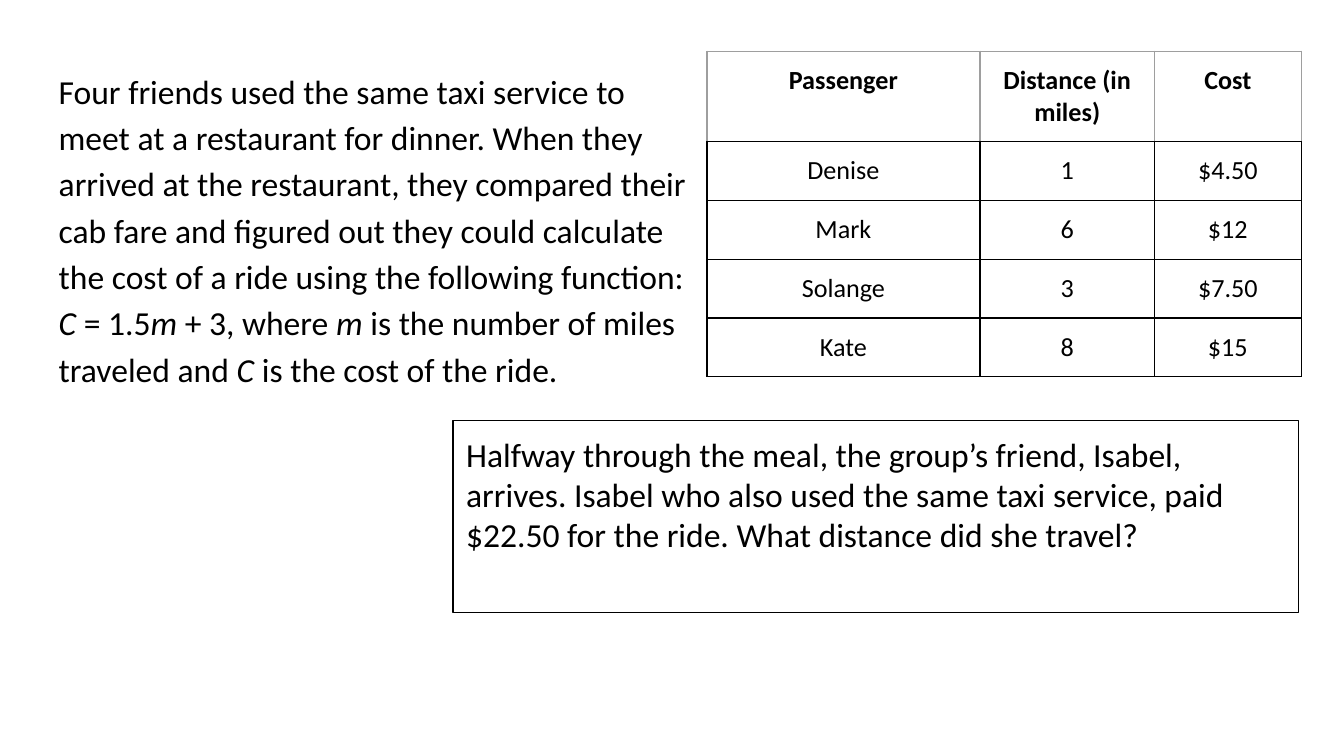
from lxml.etree import SubElement
from pptx import Presentation
from pptx.dml.color import RGBColor
from pptx.enum.shapes import MSO_SHAPE as Preset
from pptx.enum.text import MSO_ANCHOR as Anchor, PP_ALIGN as Align
from pptx.oxml.ns import qn
from pptx.util import Cm, Pt

COLOURS = {"ink": "000000", "paper": "FFFFFF", "header_line": "9E9E9E"}
STORY = [
    ("Four friends used the same taxi service to meet at a restaurant for dinner. "
     "When they arrived at the restaurant, they compared their cab fare and figured out "
     "they could calculate the cost of a ride using the following function: ", False),
    ("C ", True), ("= 1.5", False), ("m ", True), ("+ 3, where ", False), ("m", True),
    (" is the number of miles traveled and ", False), ("C", True),
    (" is the cost of the ride.", False),
]
QUESTION = ("Halfway through the meal, the group’s friend, Isabel, arrives. Isabel who also "
            "used the same taxi service, paid $22.50 for the ride. "
            "What distance did she travel?")
FARES = [
    ("Passenger", "Distance (in miles)", "Cost"),
    ("Denise", "1", "$4.50"),
    ("Mark", "6", "$12"),
    ("Solange", "3", "$7.50"),
    ("Kate", "8", "$15"),
]


class SlideWriter:
    """Draws styled text, boxes and tables on one page."""

    font_name = "Calibri"
    body_size = Pt(18)
    table_size = Pt(14)
    inset = Cm(0.25)
    line_width = Pt(0.75)

    def __init__(self, page):
        self.page = page

    def colour(self, name):
        return RGBColor.from_string(COLOURS[name])

    def style(self, para, size, align=Align.LEFT, bold=False):
        para.alignment = align
        font = para.font
        font.name, font.size, font.bold = self.font_name, size, bold
        font.color.rgb = self.colour("ink")

    def frame(self, shape):
        frame = shape.text_frame
        frame.word_wrap = True
        frame.vertical_anchor = Anchor.TOP
        frame.margin_left = frame.margin_right = self.inset
        frame.margin_top = frame.margin_bottom = self.inset
        return frame

    def text(self, left, top, width, height, spans):
        box = self.page.shapes.add_textbox(Cm(left), Cm(top), Cm(width), Cm(height))
        para = self.frame(box).paragraphs[0]
        self.style(para, self.body_size)
        para.line_spacing = 1.15
        para.space_after = Pt(16)
        for words, italic in spans:
            span = para.add_run()
            span.text = words
            span.font.italic = italic

    def outlined_box(self, left, top, width, height, words):
        box = self.page.shapes.add_shape(
            Preset.RECTANGLE, Cm(left), Cm(top), Cm(width), Cm(height))
        box.shadow.inherit = False
        box.fill.background()
        box.line.color.rgb = self.colour("ink")
        box.line.width = self.line_width
        para = self.frame(box).paragraphs[0]
        para.text = words
        self.style(para, self.body_size)

    def borders(self, cell, **sides):
        properties = cell._tc.get_or_add_tcPr()
        for side in "LRTB":
            line = SubElement(properties, qn(f"a:ln{side}"), w=str(self.line_width))
            fill = SubElement(line, qn("a:solidFill"))
            SubElement(fill, qn("a:srgbClr"), val=COLOURS[sides[side]])

    def table(self, left, top, widths, heights, rows):
        table = self.page.shapes.add_table(
            len(rows), len(widths), Cm(left), Cm(top),
            Cm(sum(widths)), Cm(sum(heights))).table
        table.horz_banding = False
        for column, width in zip(table.columns, widths):
            column.width = Cm(width)
        for index, (row, height, values) in enumerate(zip(table.rows, heights, rows)):
            row.height = Cm(height)
            header = index == 0
            edge = "header_line" if header else "ink"
            for cell, value in zip(row.cells, values):
                cell.margin_left = cell.margin_right = self.inset
                cell.margin_top = cell.margin_bottom = self.inset
                self.borders(cell, L=edge, R=edge, T=edge, B="ink")
                if header:
                    cell.fill.background()
                else:
                    cell.fill.solid()
                    cell.fill.fore_color.rgb = self.colour("paper")
                para = cell.text_frame.paragraphs[0]
                para.text = value
                self.style(para, self.table_size, Align.CENTER, header)


def main():
    deck = Presentation()
    deck.slide_width, deck.slide_height = Cm(25.4), Cm(14.29)
    writer = SlideWriter(deck.slides.add_slide(deck.slide_layouts[6]))
    writer.text(0.86, 0.97, 12.5, 6.43, STORY)
    writer.table(13.36, 0.97, [5.16, 3.3, 2.77], [1.71] + [1.11] * 4, FARES)
    writer.outlined_box(8.56, 7.95, 15.98, 3.63, QUESTION)
    deck.save("out.pptx")


if __name__ == "__main__":
    main()
